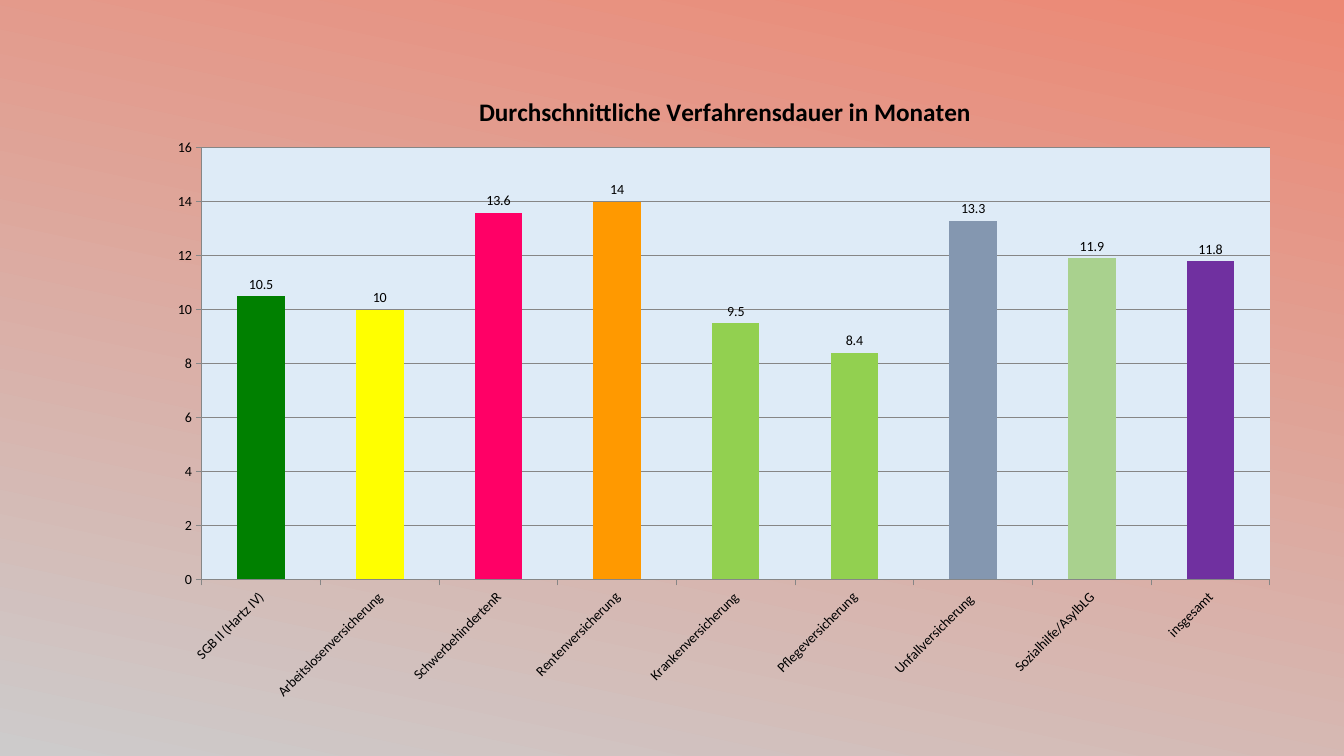
from dataclasses import dataclass

from lxml import etree
from pptx import Presentation
from pptx.chart.data import CategoryChartData
from pptx.dml.color import RGBColor
from pptx.enum.chart import XL_CHART_TYPE, XL_LABEL_POSITION, XL_TICK_MARK
from pptx.oxml.ns import qn
from pptx.util import Inches, Pt

COLUMN = XL_CHART_TYPE.COLUMN_CLUSTERED
ABOVE = XL_LABEL_POSITION.OUTSIDE_END
OUT, NONE = XL_TICK_MARK.OUTSIDE, XL_TICK_MARK.NONE
FONT, BLACK, GREY = "Calibri", "000000", "868686"
WIDE, HIGH = Inches(13.33), Inches(7.5)


@dataclass(frozen=True)
class Bar:
    name: str
    months: float
    fill: str


BARS = [
    Bar("SGB II (Hartz IV)", 10.5, "008000"),
    Bar("Arbeitslosenversicherung", 10, "FFFF00"),
    Bar("SchwerbehindertenR", 13.6, "FF0066"),
    Bar("Rentenversicherung", 14, "FF9900"),
    Bar("Krankenversicherung", 9.5, "92D050"),
    Bar("Pflegeversicherung", 8.4, "92D050"),
    Bar("Unfallversicherung ", 13.3, "8497B0"),
    Bar("Sozialhilfe/AsylbLG", 11.9, "A9D18E"),
    Bar("insgesamt", 11.8, "7030A0"),
]


def color(code: str) -> RGBColor:
    return RGBColor.from_string(code)


def style(font, size: float = 10, bold: bool = False, code: str = BLACK) -> None:
    font.name, font.size, font.bold = FONT, Pt(size), bold
    font.color.rgb = color(code)


def write(frame, text: str, **form) -> None:
    frame.text = text
    style(frame.paragraphs[0].runs[0].font, **form)


def paint(fill, code: str) -> None:
    fill.solid()
    fill.fore_color.rgb = color(code)


def rule(line) -> None:
    line.color.rgb = color(GREY)
    line.width = Pt(0.75)


def place(node, index: int, **parts) -> None:
    """Fix a chart part by shares of the chart's size."""
    for old in node.findall(qn("c:layout")):
        node.remove(old)
    layout = etree.Element(qn("c:layout"))
    manual = etree.SubElement(layout, qn("c:manualLayout"))
    for key, value in parts.items():
        etree.SubElement(manual, qn(f"c:{key}")).set("val", str(value))
    node.insert(index, layout)


def shade(slide) -> None:
    fill = slide.background.fill
    fill.gradient()
    fill.gradient_angle = 258
    for stop, code in zip(fill.gradient_stops, ("EC8874", "CDCBCB")):
        stop.color.rgb = color(code)


def add_bars(slide):
    data = CategoryChartData()
    data.categories = [bar.name for bar in BARS]
    data.add_series("Series 1", [bar.months for bar in BARS])
    chart = slide.shapes.add_chart(
        COLUMN, int(WIDE * 0.1163), int(HIGH * 0.084),
        int(WIDE * 0.8455), int(HIGH * 0.8587), data).chart
    style(chart.font)
    chart.has_legend = False

    plot = chart.plots[0]
    plot.gap_width, plot.vary_by_categories = 150, False
    series = plot.series[0]
    paint(series.format.fill, "5B9BD5")
    for i, bar in enumerate(BARS):
        paint(series.points[i].format.fill, bar.fill)
    labels = series.data_labels
    labels.show_value, labels.position = True, ABOVE
    style(labels.font)
    return chart


def set_axes(chart) -> None:
    cat, val = chart.category_axis, chart.value_axis
    for axis in (cat, val):
        axis.major_tick_mark, axis.minor_tick_mark = OUT, NONE
        style(axis.tick_labels.font)
        rule(axis.format.line)
    cat.has_major_gridlines = False
    body = cat._element.find(qn("c:txPr")).find(qn("a:bodyPr"))
    body.set("rot", str(-45 * 60000))
    body.set("vert", "horz")
    val.minimum_scale, val.maximum_scale, val.major_unit = 0, 16, 2
    val.has_major_gridlines = True
    rule(val.major_gridlines.format.line)


def set_frame(chart) -> None:
    """Title, plot position and plot fill."""
    title = chart.chart_title
    write(title.text_frame, "Durchschnittliche Verfahrensdauer in Monaten",
          size=18, bold=True)
    place(title._element, 1, xMode="edge", yMode="edge", x=0.28, y=0.04)
    area = chart._chartSpace.chart.plotArea
    place(area, 0, layoutTarget="inner", xMode="edge", yMode="edge",
          x=0.04, y=0.13, w=0.94, h=0.665)
    props = etree.SubElement(area, qn("c:spPr"))
    solid = etree.SubElement(props, qn("a:solidFill"))
    etree.SubElement(solid, qn("a:srgbClr")).set("val", "DEEBF7")


def main() -> None:
    deck = Presentation()
    deck.slide_width, deck.slide_height = WIDE, HIGH
    slide = deck.slides.add_slide(deck.slide_layouts[6])
    shade(slide)
    chart = add_bars(slide)
    set_axes(chart)
    set_frame(chart)
    deck.save("out.pptx")


if __name__ == "__main__":
    main()
